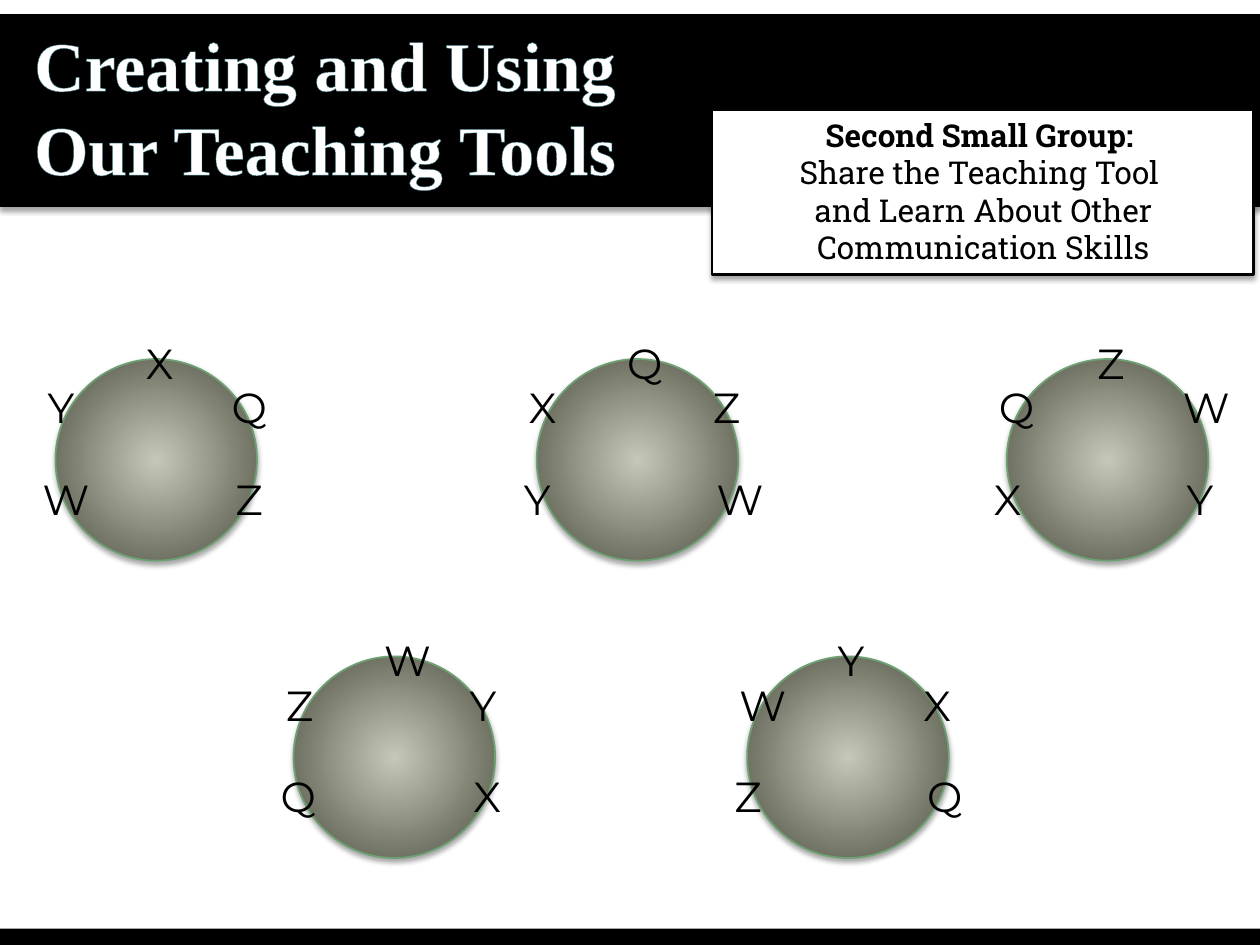
from dataclasses import dataclass

from pptx import Presentation
from pptx.dml.color import RGBColor
from pptx.enum.shapes import MSO_SHAPE as Shape
from pptx.enum.text import MSO_ANCHOR as Anchor, MSO_AUTO_SIZE as AutoSize, PP_ALIGN as Align
from pptx.oxml import parse_xml
from pptx.oxml.ns import nsdecls, qn
from pptx.util import Inches, Pt


@dataclass(frozen=True)
class Theme:
    black: str = "000000"
    white: str = "FFFFFF"
    title_edge: str = "3C7483"
    circle_edge: str = "6EA172"
    circle_center: str = "C4C6B8"
    circle_rim: str = "4D5040"
    title_font: str = "Times New Roman"
    note_font: str = "Roboto Slab"
    letter_font: str = "Montserrat"
    title_size: float = 40
    title_leading: float = 48
    note_size: float = 18
    note_leading: float = 21.5
    letter_size: float = 24


THEME = Theme()
COLUMNS, ROWS = 100, 75
CELL = Inches(0.1)
CIRCLE_SIZE = 16
LETTER_CYCLE = "XQZWY"
SEATS = [(6.2, -2.2), (13, 1.3), (13.3, 8.6), (-2, 8.6), (-1.6, 1.3)]
CIRCLES = [("X", 4.4, 28.5), ("Q", 42.6, 28.5), ("W", 23.3, 52.1),
           ("Z", 79.9, 28.5), ("Y", 59.3, 52.1)]


def cells(*counts):
    return [round(count * CELL) for count in counts]


def solid_xml(color):
    return f'<a:solidFill><a:srgbClr val="{color}"/></a:solidFill>'


def add_shadow(shape):
    shape.shadow.inherit = False
    effects = shape._element.spPr.find(qn("a:effectLst"))
    effects.append(parse_xml(
        f'<a:outerShdw {nsdecls("a")} blurRad="{Pt(3.1)}" dist="{Pt(1.8)}" '
        'dir="5400000" rotWithShape="0"><a:srgbClr val="000000">'
        '<a:alpha val="35000"/></a:srgbClr></a:outerShdw>'))


def add_block(parent, kind, area, fill, edge=None, width=0, shadow=True):
    shape = parent.shapes.add_shape(kind, *cells(*area))
    shape.fill.solid()
    shape.fill.fore_color.rgb = RGBColor.from_string(fill)
    if edge:
        shape.line.color.rgb = RGBColor.from_string(edge)
        shape.line.width = Pt(width)
    else:
        shape.line.fill.background()
    if shadow:
        add_shadow(shape)
    else:
        shape.shadow.inherit = False
    return shape


def add_radial_fill(shape):
    gradient = parse_xml(
        f'<a:gradFill {nsdecls("a")} rotWithShape="1"><a:gsLst>'
        f'<a:gs pos="1000"><a:srgbClr val="{THEME.circle_center}"/></a:gs>'
        f'<a:gs pos="100000"><a:srgbClr val="{THEME.circle_rim}"/></a:gs></a:gsLst>'
        '<a:path path="circle"><a:fillToRect l="50000" t="50000" r="50000" b="50000"/>'
        '</a:path></a:gradFill>')
    properties = shape._element.spPr
    properties.replace(properties.find(qn("a:solidFill")), gradient)


def add_span(para, text, font, size, color, bold=False, outline=None):
    span = para.add_run()
    span.text = text
    span.font.name = font
    span.font.size = Pt(size)
    span.font.bold = bold
    span.font.color.rgb = RGBColor.from_string(color)
    if outline:
        edge, width = outline
        span._r.get_or_add_rPr().insert(0, parse_xml(
            f'<a:ln {nsdecls("a")} w="{Pt(width)}">{solid_xml(edge)}</a:ln>'))


def add_lines(para, lines, font, size, color, outline=None):
    for index, (text, bold) in enumerate(lines):
        if index:
            para.add_line_break()
        add_span(para, text, font, size, color, bold, outline)


def add_text_box(parent, area):
    box = parent.shapes.add_textbox(*cells(*area))
    box.text_frame.word_wrap = True
    box.text_frame.auto_size = AutoSize.SHAPE_TO_FIT_TEXT
    return box.text_frame.paragraphs[0]


def set_title(page):
    title = page.shapes.title
    title.left, title.top, title.width, title.height = cells(1.7, 2.1, 55.6, 12.5)
    frame = title.text_frame
    frame.word_wrap = True
    frame.auto_size = AutoSize.NONE
    frame.vertical_anchor = Anchor.MIDDLE
    para = frame.paragraphs[0]
    para.alignment = Align.LEFT
    para.line_spacing = Pt(THEME.title_leading)
    add_lines(para, [("Creating and Using ", True), ("Our Teaching Tools", True)],
              THEME.title_font, THEME.title_size, THEME.white, (THEME.title_edge, 0.75))


def add_note(page):
    add_block(page, Shape.RECTANGLE, (56.5, 8.7, 43, 13.1), THEME.white, THEME.black, 1.5)
    para = add_text_box(page, (57.7, 8.7, 40.7, 13.1))
    para.alignment = Align.CENTER
    para.line_spacing = Pt(THEME.note_leading)
    add_lines(para, [("Second Small Group: ", True), ("Share the Teaching Tool ", False),
                     ("and Learn About Other Communication Skills", False)],
              THEME.note_font, THEME.note_size, THEME.black)


def add_circle(page, first_letter, left, top):
    group = page.shapes.add_group_shape()
    circle = add_block(group, Shape.OVAL, (left, top, CIRCLE_SIZE, CIRCLE_SIZE),
                       THEME.circle_center, THEME.circle_edge, 1)
    add_radial_fill(circle)
    start = LETTER_CYCLE.index(first_letter)
    letters = LETTER_CYCLE[start:] + LETTER_CYCLE[:start]
    for letter, (across, down) in zip(letters, SEATS):
        para = add_text_box(group, (left + across, top + down, 3.6, 5))
        add_span(para, letter, THEME.letter_font, THEME.letter_size, THEME.black,
                 outline=(THEME.white, 1))


def main():
    deck = Presentation()
    deck.slide_width, deck.slide_height = cells(COLUMNS, ROWS)
    page = deck.slides.add_slide(deck.slide_layouts[5])
    banner = add_block(page, Shape.RECTANGLE, (0, 1.3, 100.8, 15),
                       THEME.black, THEME.black, 2.25)
    page.shapes.title._element.addprevious(banner._element)
    set_title(page)
    add_note(page)
    for first_letter, left, top in CIRCLES:
        add_circle(page, first_letter, left, top)
    add_block(page, Shape.RECTANGLE, (0, 73.7, 100.8, 1.3), THEME.black, shadow=False)
    deck.save("out.pptx")


if __name__ == "__main__":
    main()
